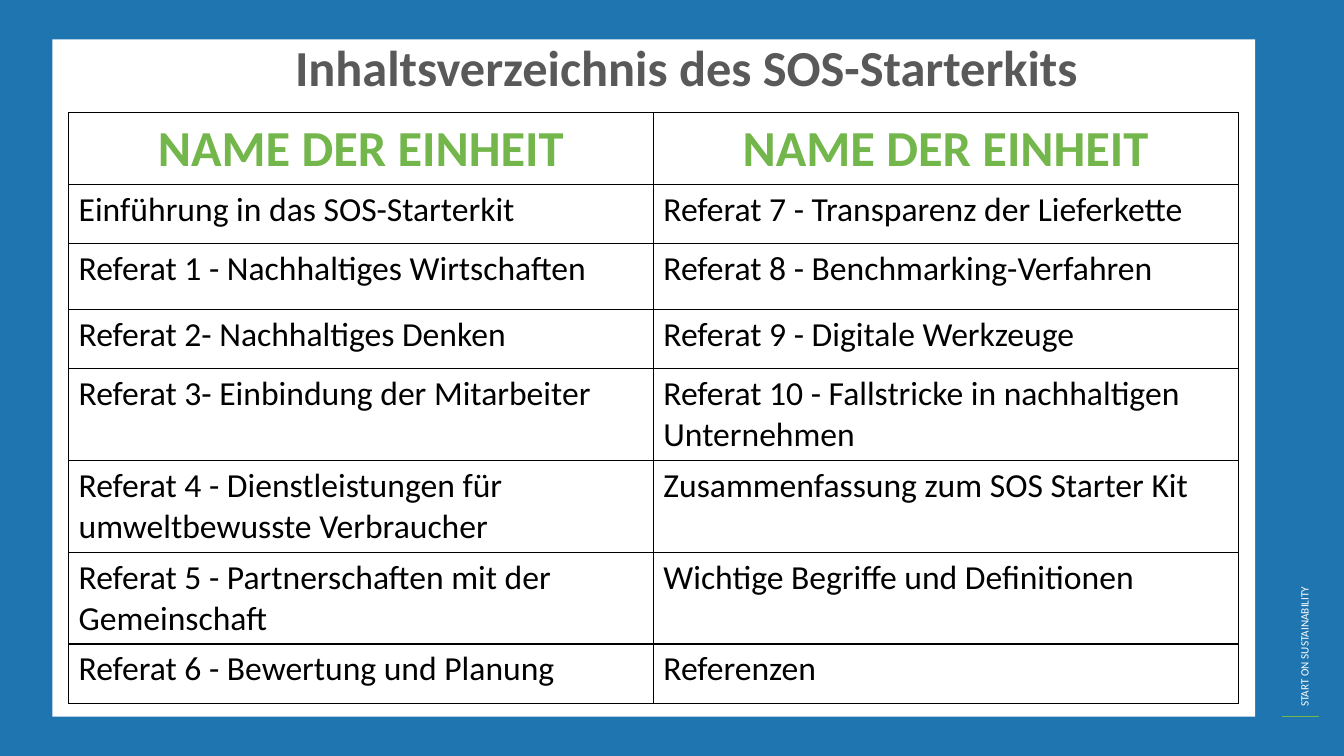
import pptx
import pptx.dml.color
import pptx.enum.shapes
import pptx.enum.text
import pptx.oxml
import pptx.oxml.ns
import pptx.util
from pptx.util import Inches

COLOURS = {
    "blue": "1E75B0",
    "white": "FFFFFF",
    "green": "73B64B",
    "grey": "595959",
    "ink": "010101",
    "border": "000000",
}
FONT = "Calibri"
HEADING = "NAME DER EINHEIT"
UNITS = [
    ("Einführung in das SOS-Starterkit", "Referat 7 - Transparenz der Lieferkette"),
    ("Referat 1 - Nachhaltiges Wirtschaften", "Referat 8 - Benchmarking-Verfahren"),
    ("Referat 2- Nachhaltiges Denken", "Referat 9 - Digitale Werkzeuge"),
    ("Referat 3- Einbindung der Mitarbeiter",
     "Referat 10 - Fallstricke in nachhaltigen Unternehmen"),
    ("Referat 4 - Dienstleistungen für umweltbewusste Verbraucher",
     "Zusammenfassung zum SOS Starter Kit"),
    ("Referat 5 - Partnerschaften mit der Gemeinschaft",
     "Wichtige Begriffe und Definitionen"),
    ("Referat 6 - Bewertung und Planung", "Referenzen"),
]
ROW_HEIGHTS = [0.71, 0.59, 0.65, 0.59, 0.91, 0.91, 0.91, 0.59]


def colour(name):
    """Return the named colour."""
    return pptx.dml.color.RGBColor.from_string(COLOURS[name])


def write(frame, text, size, tone, bold=False, centred=False):
    """Set one paragraph of formatted text in a frame."""
    frame.word_wrap = True
    frame.text = text
    para = frame.paragraphs[0]
    align = pptx.enum.text.PP_ALIGN
    para.alignment = align.CENTER if centred else align.LEFT
    for span in para.runs:
        span.font.name = FONT
        span.font.size = pptx.util.Pt(size)
        span.font.bold = bold
        span.font.color.rgb = colour(tone)
    return para


def add_panel(page, left, top, width, height, tone):
    """Draw a plain filled rectangle."""
    panel = page.shapes.add_shape(
        pptx.enum.shapes.MSO_SHAPE.RECTANGLE,
        Inches(left), Inches(top), Inches(width), Inches(height))
    panel.shadow.inherit = False
    panel.fill.solid()
    panel.fill.fore_color.rgb = colour(tone)
    panel.line.fill.background()


def add_side_label(page, left, top, width, height):
    """Place the upright label in its box, with the short rule under it."""
    centre = left + width / 2
    bottom = top + height
    box = page.shapes.add_textbox(
        Inches(centre - height / 2), Inches(top + height / 2 - width / 2),
        Inches(height), Inches(width))
    box.rotation = 270
    write(box.text_frame, "START ON SUSTAINABILITY", 8, "white")
    rule = page.shapes.add_connector(
        pptx.enum.shapes.MSO_CONNECTOR.STRAIGHT,
        Inches(centre - 0.22), Inches(bottom), Inches(centre + 0.14), Inches(bottom))
    rule.line.color.rgb = colour("green")
    rule.line.width = pptx.util.Pt(1)
    rule._element.spPr.append(pptx.oxml.parse_xml(
        f"<a:effectLst {pptx.oxml.ns.nsdecls('a')}/>"))


def add_title(page, left, top, width, height):
    """Place the centred slide title."""
    box = page.shapes.add_textbox(
        Inches(left), Inches(top), Inches(width), Inches(height))
    para = write(box.text_frame, "Inhaltsverzeichnis des SOS-Starterkits",
                 36, "grey", bold=True, centred=True)
    para.line_spacing = 0.9


def add_borders(cell):
    """Draw a thin line on all four sides of a cell."""
    properties = cell._tc.get_or_add_tcPr()
    for index, side in enumerate(("lnL", "lnR", "lnT", "lnB")):
        properties.insert(index, pptx.oxml.parse_xml(
            f"<a:{side} {pptx.oxml.ns.nsdecls('a')} w='12700'><a:solidFill>"
            f"<a:srgbClr val='{COLOURS['border']}'/></a:solidFill></a:{side}>"))


def add_contents_table(page, left, top, width):
    """Place the two-column table of units."""
    rows = [(HEADING, HEADING)] + UNITS
    table = page.shapes.add_table(
        len(rows), 2, Inches(left), Inches(top),
        Inches(width), Inches(sum(ROW_HEIGHTS))).table
    table.first_row = False
    table.horz_banding = False
    for row, height in zip(table.rows, ROW_HEIGHTS):
        row.height = Inches(height)
    for row_index, texts in enumerate(rows):
        for column_index, text in enumerate(texts):
            cell = table.cell(row_index, column_index)
            cell.fill.background()
            add_borders(cell)
            if row_index == 0:
                write(cell.text_frame, text, 36, "green", bold=True, centred=True)
            else:
                write(cell.text_frame, text, 24, "ink")


def build_contents_page(page, width, height):
    """Compose the contents slide."""
    add_panel(page, 0, 0, width, height, "blue")
    add_panel(page, 0.52, 0.39, 11.93, 6.72, "white")
    add_side_label(page, 12.82, 2.65, 0.24, 4.46)
    add_title(page, 1.34, 0.38, 10.94, 0.88)
    add_contents_table(page, 0.68, 1.12, 11.6)


def main():
    """Build and save the deck."""
    deck = pptx.Presentation()
    deck.slide_width = Inches(13.33)
    deck.slide_height = Inches(7.5)
    page = deck.slides.add_slide(deck.slide_layouts[6])
    build_contents_page(page, 13.33, 7.5)
    deck.save("out.pptx")


if __name__ == "__main__":
    main()
